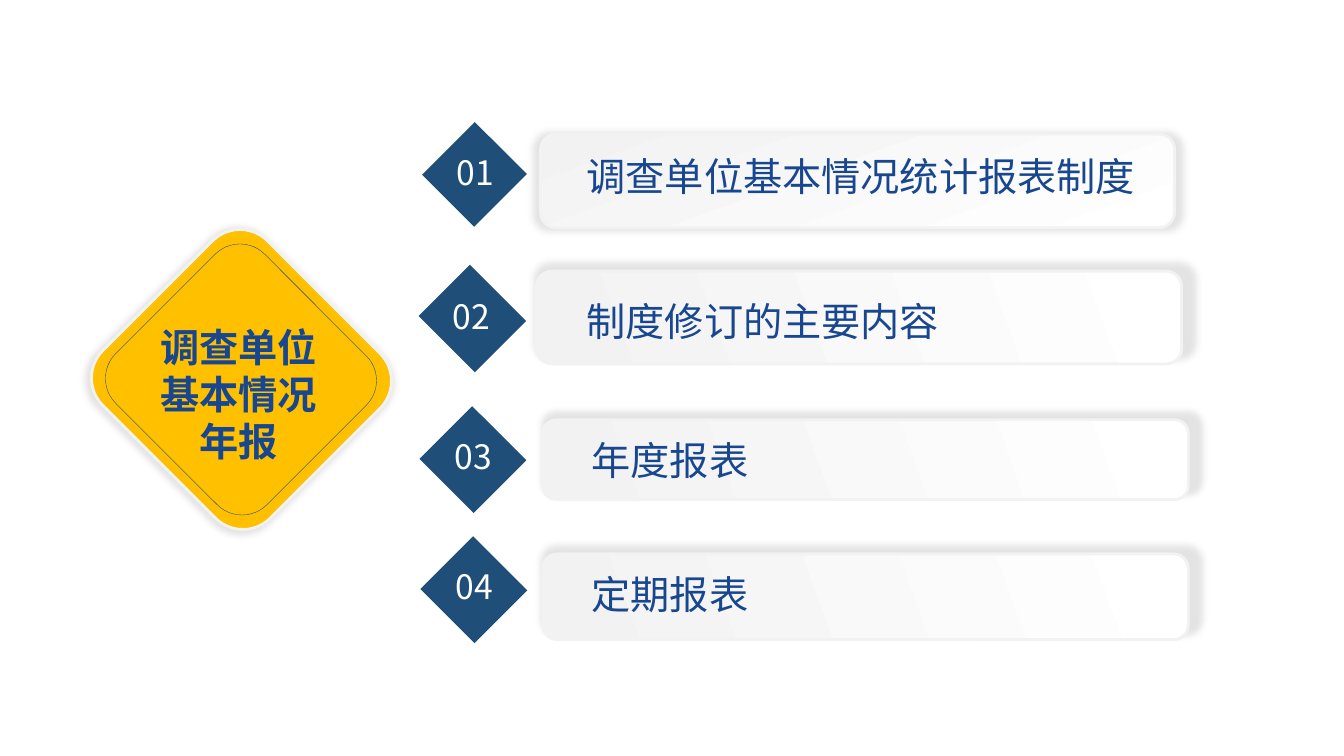
"""Builds the agenda slide for the annual report on surveyed units."""
from lxml import etree
from pptx import Presentation
from pptx.dml.color import RGBColor
from pptx.enum.shapes import MSO_SHAPE
from pptx.enum.text import MSO_ANCHOR, MSO_AUTO_SIZE, PP_ALIGN
from pptx.oxml.ns import qn
from pptx.util import Inches, Pt

RECT, ROUND = MSO_SHAPE.RECTANGLE, MSO_SHAPE.ROUNDED_RECTANGLE
TOP, CENTER = MSO_ANCHOR.TOP, PP_ALIGN.CENTER
LEFT, GROW = PP_ALIGN.LEFT, MSO_AUTO_SIZE.SHAPE_TO_FIT_TEXT
WHITE = RGBColor(0xFF, 0xFF, 0xFF)
PALE = RGBColor(0xF2, 0xF2, 0xF2)
YELLOW = RGBColor(0xFF, 0xC0, 0x00)
BLUE = RGBColor(0x18, 0x47, 0x8F)
NAVY = RGBColor(0x1F, 0x4E, 0x79)
FONT = "Noto Sans CJK SC"


def add_block(kind, box, rotation, line=None, width=0):
    sp = s.shapes.add_shape(kind, *map(Inches, box))
    sp.rotation = rotation
    sp.shadow.inherit = False
    if line is None:
        sp.line.fill.background()
        return sp
    sp.line.color.rgb = line
    sp.line.width = Pt(width)
    effects = sp._element.spPr.find(qn("a:effectLst"))
    shadow = etree.SubElement(effects, qn("a:outerShdw"), blurRad=str(Pt(5)),
                              sx="102000", sy="102000", algn="ctr", rotWithShape="0")
    color = etree.SubElement(shadow, qn("a:srgbClr"), val="000000")
    etree.SubElement(color, qn("a:alpha"), val="11000")
    return sp


def write(sp, box, lines, size, color, align=LEFT, bold=False):
    sp.left, sp.top, sp.width, sp.height = map(Inches, box)
    tf = sp.text_frame
    tf.word_wrap = True
    tf.auto_size = GROW
    tf.vertical_anchor = TOP
    for i, line in enumerate(lines):
        p = tf.add_paragraph() if i else tf.paragraphs[0]
        p.alignment = align
        p.line_spacing = 1.0
        p.space_before = Pt(0)
        r = p.add_run()
        r.text = line
        r.font.size = Pt(size)
        r.font.bold = bold
        r.font.color.rgb = color
        r.font.name = FONT
        etree.SubElement(r.font._element, qn("a:ea"), typeface=FONT)


prs = Presentation()
prs.slide_width, prs.slide_height = Inches(13.33), Inches(7.5)
s = prs.slides.add_slide(prs.slide_layouts[5])

diamond = add_block(ROUND, (1.22, 2.61, 2.35, 2.31), 45, PALE, 2)
diamond.fill.solid()
diamond.fill.fore_color.rgb = YELLOW
outline = add_block(ROUND, (1.33, 2.72, 2.12, 2.09), 45, BLUE, 0.25)
outline.fill.background()

title = s.shapes.title
s.shapes._spTree.append(title._element)
write(title, (1.11, 3.16, 2.51, 1.51), ["调查单位", "基本情况", "年报"], 28, BLUE, CENTER, True)

items = [
    ("调查单位基本情况统计报表制度", (5.36, 1.33, 6.29, 0.93), 0,
     (5.72, 1.46, 6.25, 0.57), (4.34, 1.36, 0.73, 0.74), (4.43, 1.46, 0.64, 0.5)),
    ("制度修订的主要内容", (8.06, -0.05, 0.92, 6.4), 270,
     (5.72, 2.9, 5.59, 0.57), (4.29, 2.8, 0.79, 0.72), (4.39, 2.89, 0.62, 0.5)),
    ("年度报表", (8.19, 1.36, 0.79, 6.4), 270,
     (5.77, 4.28, 6, 0.57), (4.31, 4.19, 0.76, 0.74), (4.41, 4.28, 0.62, 0.5)),
    ("定期报表", (8.16, 2.72, 0.85, 6.4), 270,
     (5.77, 5.61, 5.59, 0.57), (4.32, 5.48, 0.76, 0.74), (4.42, 5.57, 0.62, 0.5)),
]
for number, (label, bar_box, turn, label_box, badge_box, number_box) in enumerate(items, 1):
    bar = add_block(ROUND, bar_box, turn, PALE, 2)
    bar.fill.gradient()
    bar.fill.gradient_angle = 110
    for stop, color in zip(bar.fill.gradient_stops, (WHITE, PALE)):
        stop.color.rgb = color
    write(s.shapes.add_textbox(0, 0, 0, 0), label_box, [label], 28, BLUE)

    badge = add_block(RECT, badge_box, 225)
    badge.fill.solid()
    badge.fill.fore_color.rgb = NAVY
    write(s.shapes.add_textbox(0, 0, 0, 0), number_box, [f"{number:02}"], 24, WHITE)

prs.save("out.pptx")
